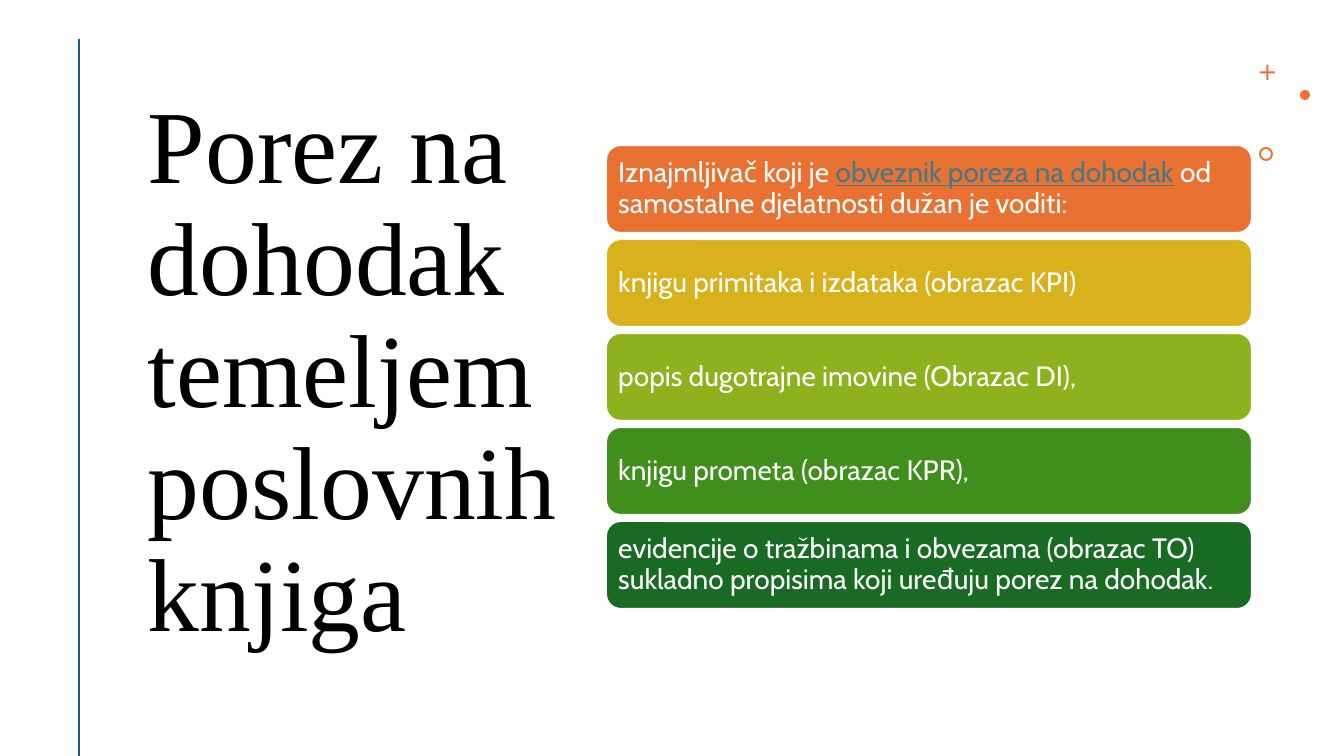
from pptx import Presentation
from pptx import util as u
from pptx.dml.color import RGBColor
from pptx.enum import shapes, text
from pptx.oxml import xmlchemy

PX = 914400 / 100.8
WHITE = RGBColor(0xFF, 0xFF, 0xFF)
BLACK = RGBColor(0x00, 0x00, 0x00)
TEAL = RGBColor(0x15, 0x60, 0x82)
LINK = RGBColor(0x46, 0x78, 0x86)
ORANGE = RGBColor(0xE9, 0x71, 0x32)
GOLD = RGBColor(0xD8, 0xB1, 0x1D)
LIME = RGBColor(0x8E, 0xB2, 0x1E)
GREEN = RGBColor(0x40, 0x8E, 0x1C)
FOREST = RGBColor(0x19, 0x6B, 0x24)

CARDS = [
    (ORANGE, ["Iznajmljivač koji je ", "obveznik poreza na dohodak",
              " od samostalne djelatnosti dužan je voditi:"]),
    (GOLD, ["knjigu primitaka i izdataka (obrazac KPI)"]),
    (LIME, ["popis dugotrajne imovine (Obrazac DI),"]),
    (GREEN, ["knjigu prometa (obrazac KPR),"]),
    (FOREST, ["evidencije o tražbinama i obvezama (obrazac TO) "
              "sukladno propisima koji uređuju porez na dohodak."]),
]


def px(*lengths):
    """Turn pixel lengths into EMU."""
    return [u.Emu(round(length * PX)) for length in lengths]


def add_filled(page, kind, box, color):
    """Add a flat preset shape without outline."""
    shape = page.shapes.add_shape(kind, *px(*box))
    shape.shadow.inherit = False
    shape.fill.solid()
    shape.fill.fore_color.rgb = color
    shape.line.fill.background()
    return shape


def add_title(page, box):
    """Add the large serif title."""
    title = page.shapes.add_textbox(*px(*box))
    frame = title.text_frame
    frame.word_wrap = True
    frame.vertical_anchor = text.MSO_ANCHOR.MIDDLE
    frame.text = "Porez na dohodak temeljem poslovnih knjiga"
    para = frame.paragraphs[0]
    para.line_spacing = 0.9
    para.font.size = u.Pt(74)
    para.font.name = "Times New Roman"
    para.font.color.rgb = BLACK


def add_rule(page, box):
    """Add the vertical rule along the left edge of the box."""
    left, top, _, height = box
    rule = page.shapes.add_connector(
        shapes.MSO_CONNECTOR.STRAIGHT, *px(left, top, left, top + height))
    rule.line.color.rgb = TEAL
    rule.line.width = u.Pt(2)
    rule._element.spPr.append(xmlchemy.OxmlElement("a:effectLst"))


def add_ornaments(page, box):
    """Add the plus, dot and ring in the corner."""
    left, top, _, _ = box
    kinds = shapes.MSO_SHAPE
    plus = add_filled(page, kinds.CROSS, (left + 1, top, 15, 15), ORANGE)
    plus.adjustments[0] = 0.43
    add_filled(page, kinds.OVAL, (left + 41, top + 25, 10, 10), ORANGE)
    ring = add_filled(page, kinds.DONUT, (left, top + 82, 14, 14), ORANGE)
    ring.adjustments[0] = 0.14


def add_card(page, box, color, parts):
    """Add one rounded card; a second part is styled as a link."""
    card = add_filled(page, shapes.MSO_SHAPE.ROUNDED_RECTANGLE, box, color)
    card.line.color.rgb = WHITE
    card.line.width = u.Pt(1.5)
    frame = card.text_frame
    frame.word_wrap = True
    frame.vertical_anchor = text.MSO_ANCHOR.MIDDLE
    frame.margin_left, frame.margin_right = px(8, 8)
    frame.margin_top, frame.margin_bottom = px(8, 8)
    para = frame.paragraphs[0]
    para.alignment = text.PP_ALIGN.LEFT
    para.line_spacing = 0.9
    for index, part in enumerate(parts):
        span = para.add_run()
        span.text = part
        span.font.size = u.Pt(20)
        span.font.name = "Cabin"
        span.font.color.rgb = LINK if index == 1 else WHITE
        span.font.underline = index == 1


def add_cards(page, box):
    """Stack the cards evenly down the box."""
    left, top, width, height = box
    gap = 6
    card_height = (height - gap * (len(CARDS) - 1)) / len(CARDS)
    for row, (color, parts) in enumerate(CARDS):
        card_top = top + row * (card_height + gap)
        add_card(page, (left, card_top, width, card_height), color, parts)


def main():
    """Build the slide and save it."""
    deck = Presentation()
    deck.slide_width, deck.slide_height = px(1344, 756)
    page = deck.slides.add_slide(deck.slide_layouts[6])
    add_title(page, (138, 66, 434, 616))
    add_rule(page, (79, 39, 0, 717))
    add_ornaments(page, (1259, 65, 51, 96))
    add_cards(page, (606, 145, 646, 464))
    deck.save("out.pptx")


if __name__ == "__main__":
    main()
